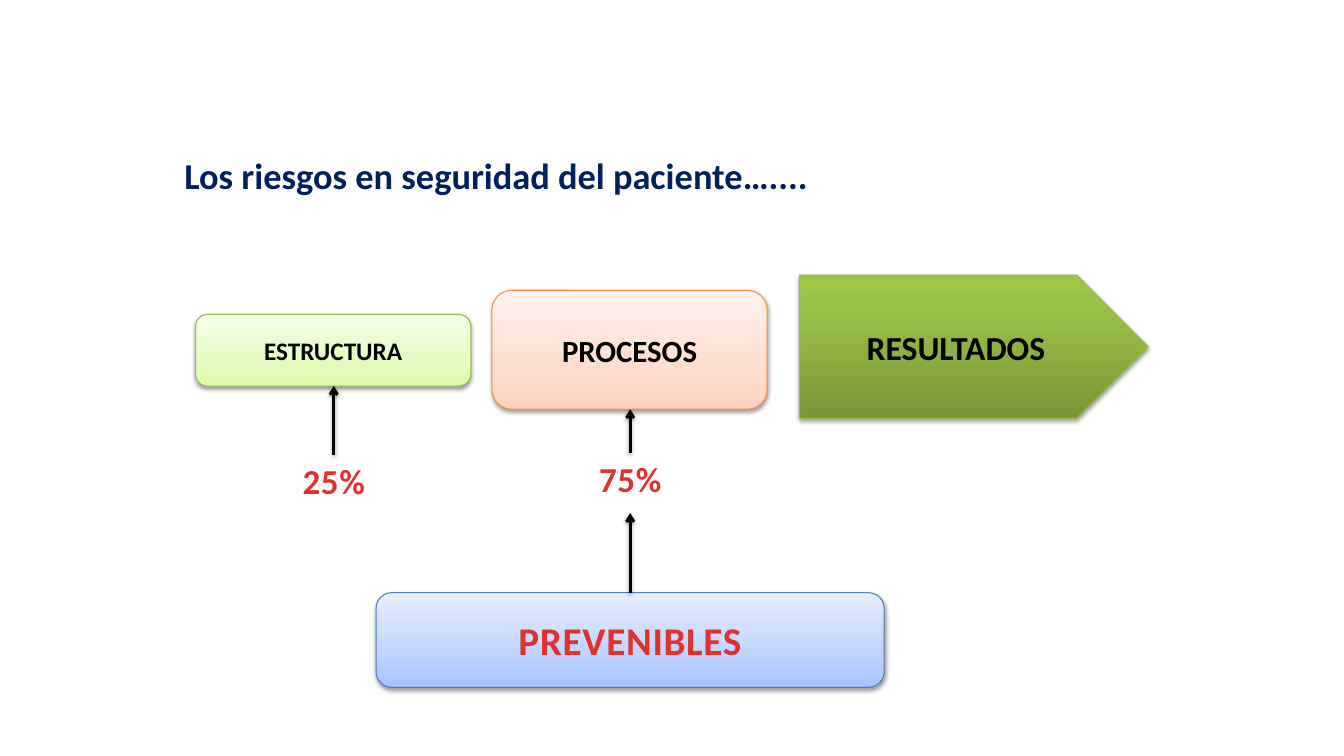
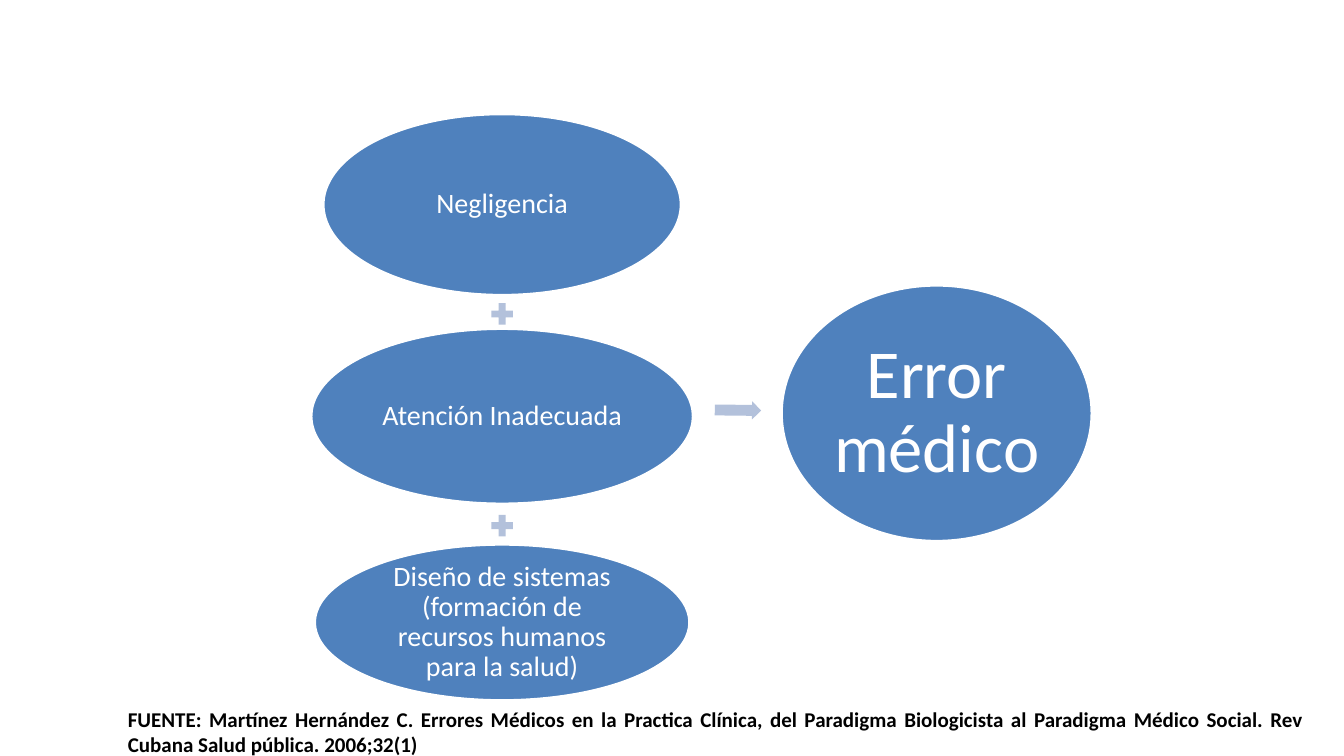
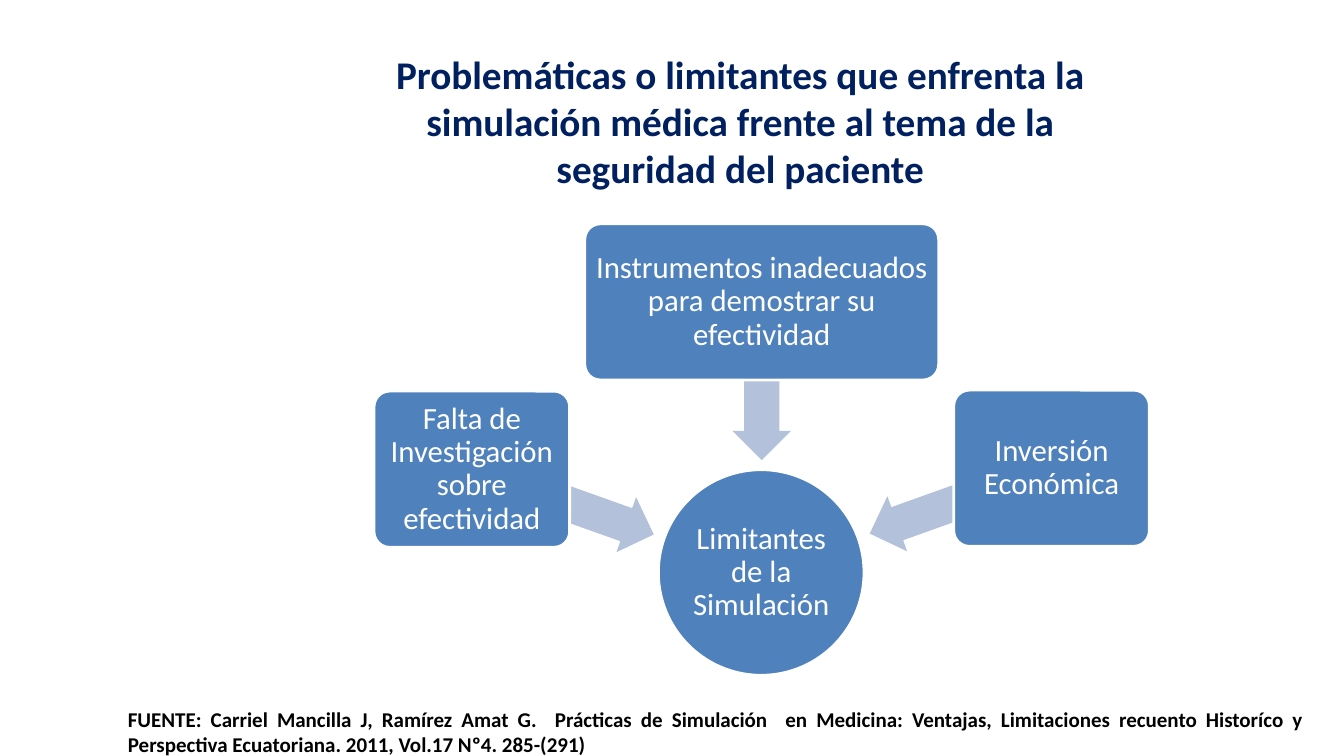
from lxml import etree
from pptx import Presentation
from pptx import util as u
from pptx.dml.color import RGBColor
from pptx.enum import shapes, text
from pptx.oxml import parse_xml
from pptx.oxml.ns import nsdecls, qn


class Theme:
    font = "Calibri"
    navy, red, black, white = "002060", "E0322D", "000000", "FFFFFF"
    blue, pale = "4F81BD", "B3C1DB"
    green_edge, orange_edge, blue_edge = "98B955", "F69240", "4B7EBC"
    lime = [(0, "DAFDA7"), (35, "E4FCC2"), (100, "F5FFE7")]
    peach = [(0, "FFD2BD"), (35, "FFDED0"), (100, "FFF2ED")]
    leaf = [(0, "779737"), (80, "9BC348"), (100, "9DC746")]
    sky = [(0, "A4C4FF"), (35, "BFD4FF"), (100, "E6EEFF")]
    shadow = (
        f'<a:outerShdw {nsdecls("a")} blurRad="40000" dist="20000" dir="5400000" rotWithShape="0">'
        '<a:srgbClr val="000000"><a:alpha val="38000"/></a:srgbClr></a:outerShdw>'
    )
    small, cause, item, stage, result = 18, 20, 22, 22, 24
    percent, heading, title, source, outcome = 25, 26, 28, 15, 49


SHAPE = shapes.MSO_SHAPE
ALIGN = text.PP_ALIGN
CENTRED = {"alignment": ALIGN.CENTER}
DIAGRAM = {"alignment": ALIGN.CENTER, "line_spacing": 0.9}


def write(frame, words, size, color, bold=True, layout=CENTRED, inset=None, tracking=0):
    frame.word_wrap = True
    if inset is not None:
        for side in ("left", "right", "top", "bottom"):
            setattr(frame, f"margin_{side}", u.Inches(inset))
    paragraph = frame.paragraphs[0]
    for name, value in layout.items():
        setattr(paragraph, name, value)
    run = paragraph.add_run()
    run.text = words
    for name, value in {"name": Theme.font, "size": u.Pt(size), "bold": bold}.items():
        setattr(run.font, name, value)
    run.font.color.rgb = RGBColor.from_string(color)
    if tracking:
        run.font._element.set("spc", str(tracking))


def add_part(slide, preset, at, fill, edge=None, adjust=(), turn=0):
    part = slide.shapes.add_shape(preset, *map(u.Inches, at))
    part.rotation = turn
    part.shadow.inherit = False
    for index, value in enumerate(adjust):
        part.adjustments[index] = value
    if isinstance(fill, str):
        part.fill.solid()
        part.fill.fore_color.rgb = RGBColor.from_string(fill)
    else:
        stops = "".join(
            f'<a:gs pos="{place * 1000}"><a:srgbClr val="{color}"/></a:gs>' for place, color in fill
        )
        part.fill.background()
        properties = part._element.spPr
        properties.replace(properties.find(qn("a:noFill")), parse_xml(
            f'<a:gradFill {nsdecls("a")} rotWithShape="1"><a:gsLst>{stops}</a:gsLst>'
            '<a:lin ang="16200000" scaled="0"/></a:gradFill>'
        ))
        properties.find(qn("a:effectLst")).append(parse_xml(Theme.shadow))
    if edge:
        part.line.color.rgb = RGBColor.from_string(edge[0])
        part.line.width = u.Pt(edge[1])
    else:
        part.line.fill.background()
    part.text_frame.vertical_anchor = text.MSO_ANCHOR.MIDDLE
    return part


deck = Presentation()
deck.slide_width, deck.slide_height = u.Inches(13.33), u.Inches(7.5)
risks, errors, limits = [deck.slides.add_slide(deck.slide_layouts[6]) for _ in range(3)]

heading = risks.shapes.add_textbox(*map(u.Inches, (1.73, 1.47, 6.6, 0.54)))
write(heading.text_frame, "Los riesgos en seguridad del paciente…....",
      Theme.heading, Theme.navy, layout={"alignment": ALIGN.LEFT})

stages = [
    ("ESTRUCTURA", SHAPE.ROUNDED_RECTANGLE, (1.94, 3.12, 2.73, 0.71),
     Theme.lime, Theme.green_edge, Theme.small, Theme.black, 0),
    ("PROCESOS", SHAPE.ROUNDED_RECTANGLE, (4.88, 2.88, 2.73, 1.18),
     Theme.peach, Theme.orange_edge, Theme.stage, Theme.black, 0),
    ("RESULTADOS", SHAPE.PENTAGON, (7.93, 2.73, 3.46, 1.42),
     Theme.leaf, Theme.green_edge, Theme.result, Theme.black, 0),
    ("PREVENIBLES", SHAPE.ROUNDED_RECTANGLE, (3.73, 5.88, 5.04, 0.94),
     Theme.sky, Theme.blue_edge, Theme.title, Theme.red, 50),
]
for words, preset, at, fill, edge, size, color, tracking in stages:
    stage = add_part(risks, preset, at, fill, (edge, 0.75))
    write(stage.text_frame, words, size, color, tracking=tracking)

structure_x, process_x, share_width = 3.31, 6.25, 1.68
for words, center, top in [("25%", structure_x, 4.51), ("75%", process_x, 4.49)]:
    share = risks.shapes.add_textbox(
        *map(u.Inches, (center - share_width / 2, top, share_width, 0.52)))
    write(share.text_frame, words, Theme.percent, Theme.red, tracking=50)

for center, start, end in [(structure_x, 4.51, 3.83), (process_x, 4.49, 4.06), (process_x, 5.88, 5.09)]:
    arrow = risks.shapes.add_connector(
        shapes.MSO_CONNECTOR.STRAIGHT, *map(u.Inches, (center, start, center, end)))
    arrow.line.color.rgb = RGBColor.from_string(Theme.black)
    arrow.line.width = u.Pt(2)
    etree.SubElement(arrow.line._get_or_add_ln(), qn("a:tailEnd"), type="arrow")
    effects = etree.SubElement(arrow._element.spPr, qn("a:effectLst"))
    effects.append(parse_xml(Theme.shadow))

white_edge = (Theme.white, 2)
cause_x = 4.98
causes = [
    ("Negligencia", 1.13, 3.55, 1.8),
    ("Atención Inadecuada", 3.26, 3.79, 1.74),
    ("Diseño de sistemas (formación de recursos humanos para la salud)", 5.4, 3.72, 1.55),
]
for words, top, width, height in causes:
    cause = add_part(errors, SHAPE.OVAL, (cause_x - width / 2, top, width, height),
                     Theme.blue, white_edge)
    write(cause.text_frame, words, Theme.cause, Theme.white, False, DIAGRAM, 0.03)

plus_size = 0.29
for top in (2.97, 5.07):
    add_part(errors, SHAPE.MATH_PLUS, (cause_x - plus_size / 2, top, plus_size, plus_size), Theme.pale)
add_part(errors, SHAPE.RIGHT_ARROW, (7.09, 3.98, 0.46, 0.18), Theme.pale, adjust=(0.6, 0.5), turn=0.7)
outcome = add_part(errors, SHAPE.OVAL, (7.75, 2.83, 3.08, 2.54), Theme.blue, white_edge)
write(outcome.text_frame, "Error médico", Theme.outcome, Theme.white, False, DIAGRAM, 0.07)

title = limits.shapes.add_textbox(*map(u.Inches, (3.5, 0.45, 7.68, 1.51)))
write(title.text_frame,
      "Problemáticas o limitantes que enfrenta la simulación médica frente al tema de la seguridad del paciente",
      Theme.title, Theme.navy)

hub = add_part(limits, SHAPE.OVAL, (6.53, 4.66, 2.04, 2.04), Theme.blue, white_edge)
write(hub.text_frame, "Limitantes de la Simulación", Theme.item, Theme.white, False, DIAGRAM, 0.02)

limitations = [
    ("Falta de Investigación sobre efectividad", (3.71, 3.88, 1.94, 1.55), (4.62, 4.69, 1.92, 0.58), 199.6),
    ("Instrumentos inadecuados para demostrar su efectividad",
     (5.8, 2.22, 3.51, 1.55), (6.77, 3.49, 1.57, 0.58), 270),
    ("Inversión Económica", (9.46, 3.87, 1.94, 1.55), (8.57, 4.68, 1.92, 0.58), 340.3),
]
for words, box_at, arrow_at, turn in limitations:
    add_part(limits, SHAPE.LEFT_ARROW, arrow_at, Theme.pale, adjust=(0.6, 0.5), turn=turn)
    limitation = add_part(limits, SHAPE.ROUNDED_RECTANGLE, box_at, Theme.blue, white_edge, (0.1,))
    write(limitation.text_frame, words, Theme.item, Theme.white, False, DIAGRAM, 0.05)

sources = [
    (errors, "FUENTE: Martínez Hernández C. Errores Médicos en la Practica Clínica, del Paradigma "
             "Biologicista al Paradigma Médico Social. Rev Cubana Salud pública. 2006;32(1)"),
    (limits, "FUENTE: Carriel Mancilla J, Ramírez Amat G.  Prácticas de Simulación  en Medicina: Ventajas, "
             "Limitaciones recuento Historíco y Perspectiva Ecuatoriana. 2011, Vol.17 Nº4. 285-(291)"),
]
for slide, words in sources:
    source = slide.shapes.add_textbox(*map(u.Inches, (1.17, 6.96, 11.86, 0.61)))
    write(source.text_frame, words, Theme.source, Theme.black, layout={"alignment": ALIGN.JUSTIFY})

deck.save("out.pptx")
